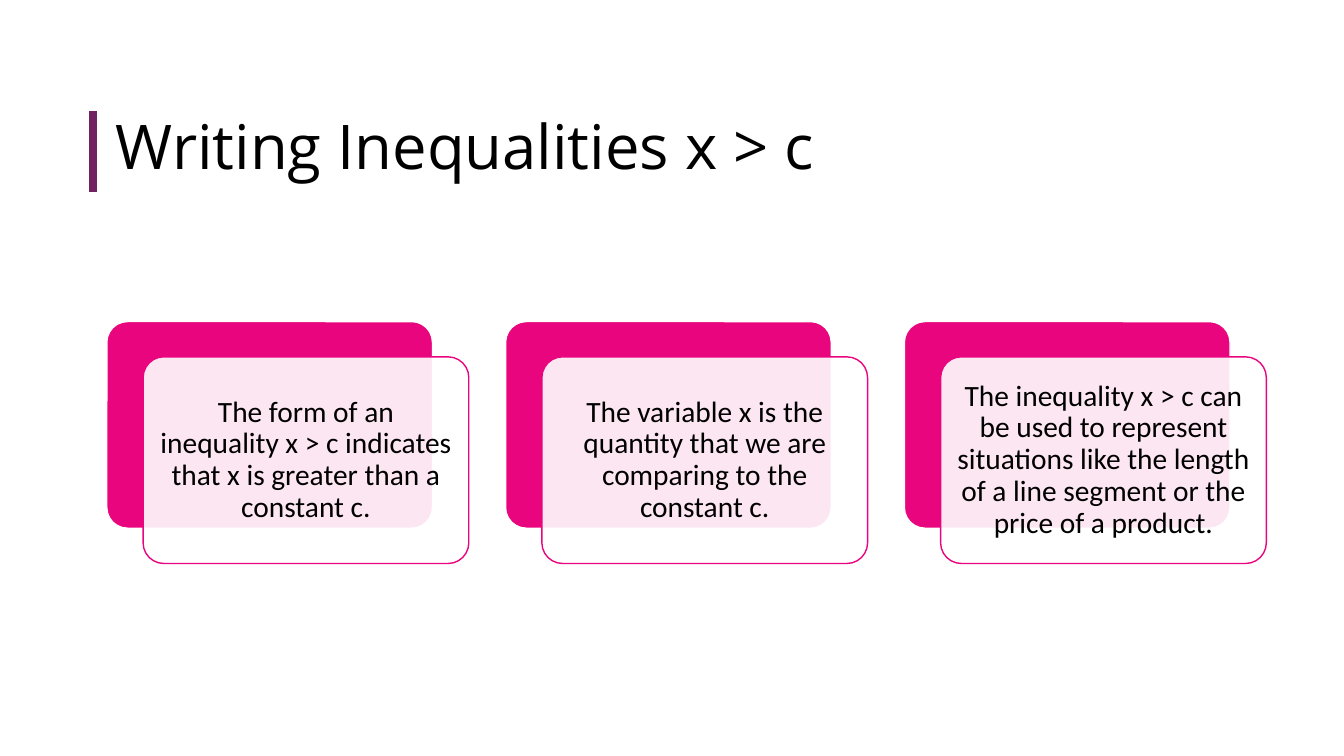
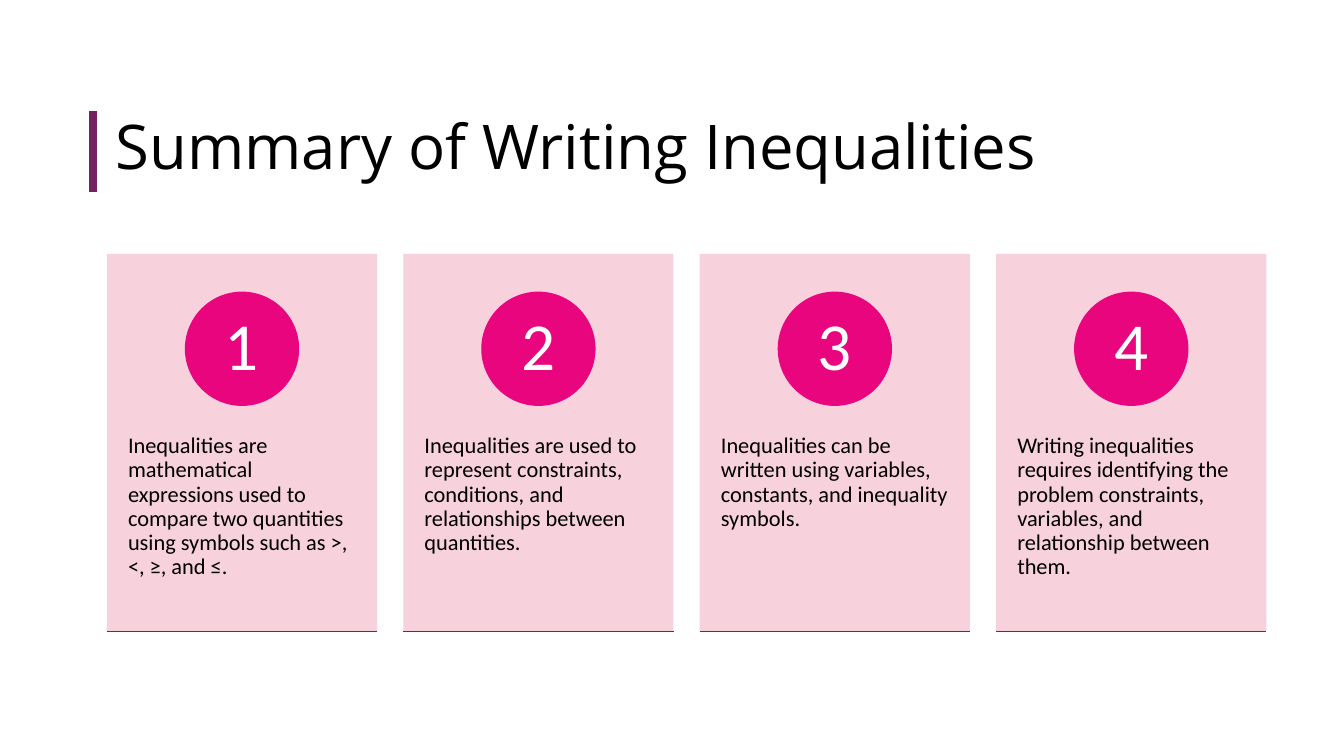
"""Build two slides on writing inequalities: three layered cards and a numbered summary."""
import pptx
import pptx.dml.color
import pptx.enum.shapes
import pptx.enum.text
import pptx.oxml.ns
import pptx.util
import lxml.etree

PX = 9144
BLACK, WHITE, PINK, BLUSH, PLUM = "000000", "FFFFFF", "E9057E", "F7CCD8", "722262"
LEFT, SPAN = 106, 1150
SHAPES = pptx.enum.shapes.MSO_SHAPE
ANCHOR = pptx.enum.text.MSO_ANCHOR
ALIGN = pptx.enum.text.PP_ALIGN
rgb = pptx.dml.color.RGBColor.from_string
qn = pptx.oxml.ns.qn


def add_box(s, kind, at, fill, line=None, alpha=None):
    """Add a preset shape with a solid fill and an optional outline."""
    sp = s.shapes.add_shape(kind, *[round(v * PX) for v in at])
    sp.shadow.inherit = False
    sp.fill.solid()
    sp.fill.fore_color.rgb = rgb(fill)
    if line:
        sp.line.color.rgb = rgb(line)
        sp.line.width = pptx.util.Pt(1)
    else:
        sp.line.fill.background()
    if alpha:
        clr = sp.fill._xPr.find(qn("a:solidFill"))[0]
        lxml.etree.SubElement(clr, qn("a:alpha"), val=str(alpha * 1000))
    return sp


def write(sp, text, size, font="Calibri", color=BLACK, align=ALIGN.LEFT,
          anchor=ANCHOR.MIDDLE, insets=(0, 0, 0, 0)):
    """Put one styled paragraph into a shape; insets are left, top, right, bottom."""
    tf = sp.text_frame
    left, top, right, bottom = [v * PX for v in insets]
    frame = {"word_wrap": True, "vertical_anchor": anchor, "margin_left": left,
             "margin_top": top, "margin_right": right, "margin_bottom": bottom}
    for name, value in frame.items():
        setattr(tf, name, value)
    p = tf.paragraphs[0]
    p.alignment = align
    p.line_spacing = 0.9
    r = p.add_run()
    r.text = text
    for name, value in {"name": font, "size": pptx.util.Pt(size)}.items():
        setattr(r.font, name, value)
    r.font.color.rgb = rgb(color)


prs = pptx.Presentation()
prs.slide_width, prs.slide_height = 1333 * PX, 750 * PX

slides = []
for title in ["Writing Inequalities x > c", "Summary of Writing Inequalities"]:
    s = prs.slides.add_slide(prs.slide_layouts[6])
    slides.append(s)
    tb = s.shapes.add_textbox(105 * PX, 108 * PX, 1150 * PX, 80 * PX)
    write(tb, title, 44, font="Open Sans", insets=(10, 5, 10, 5))

rules = [(s, 92, 110, 92, 190, 6, PLUM) for s in slides]

facts = [
    "The form of an inequality x > c indicates that x is greater than a constant c.",
    "The variable x is the quantity that we are comparing to the constant c.",
    "The inequality x > c can be used to represent situations like the length of a line "
    "segment or the price of a product.",
]
w, h, shift = 323, 205, 36
pitch = (SPAN - w - shift) / (len(facts) - 1)
for i, fact in enumerate(facts):
    x = LEFT + i * pitch
    back = add_box(slides[0], SHAPES.ROUNDED_RECTANGLE, (x, 319, w, h), PINK, WHITE)
    front = add_box(slides[0], SHAPES.ROUNDED_RECTANGLE, (x + shift, 354, w, h), WHITE, PINK, 90)
    for sp in (back, front):
        sp.adjustments[0] = 0.1
    write(front, fact, 21, align=ALIGN.CENTER, insets=(9, 9, 9, 9))

points = [
    "Inequalities are mathematical expressions used to compare two quantities using "
    "symbols such as >, <, ≥, and ≤.",
    "Inequalities are used to represent constraints, conditions, and relationships "
    "between quantities.",
    "Inequalities can be written using variables, constants, and inequality symbols.",
    "Writing inequalities requires identifying the problem constraints, variables, and "
    "relationship between them.",
]
w, top, bottom, d = 268, 252, 626, 112
pitch = (SPAN - w) / (len(points) - 1)
for i, point in enumerate(points):
    x = LEFT + i * pitch
    card = add_box(slides[1], SHAPES.RECTANGLE, (x, top, w, bottom - top), BLUSH, alpha=90)
    write(card, point, 16, anchor=ANCHOR.TOP, insets=(21, 179, 21, 0))
    badge = add_box(slides[1], SHAPES.OVAL, (x + (w - d) / 2, 290, d, d), PINK, PINK)
    write(badge, str(i + 1), 48, color=WHITE, align=ALIGN.CENTER)
    rules.append((slides[1], x, bottom, x + w, bottom, 0.25, PLUM))

for s, x1, y1, x2, y2, width, color in rules:
    ends = [round(v * PX) for v in (x1, y1, x2, y2)]
    cn = s.shapes.add_connector(pptx.enum.shapes.MSO_CONNECTOR.STRAIGHT, *ends)
    cn.line.color.rgb = rgb(color)
    cn.line.width = pptx.util.Pt(width)
    lxml.etree.SubElement(cn._element.spPr, qn("a:effectLst"))

prs.save("out.pptx")
